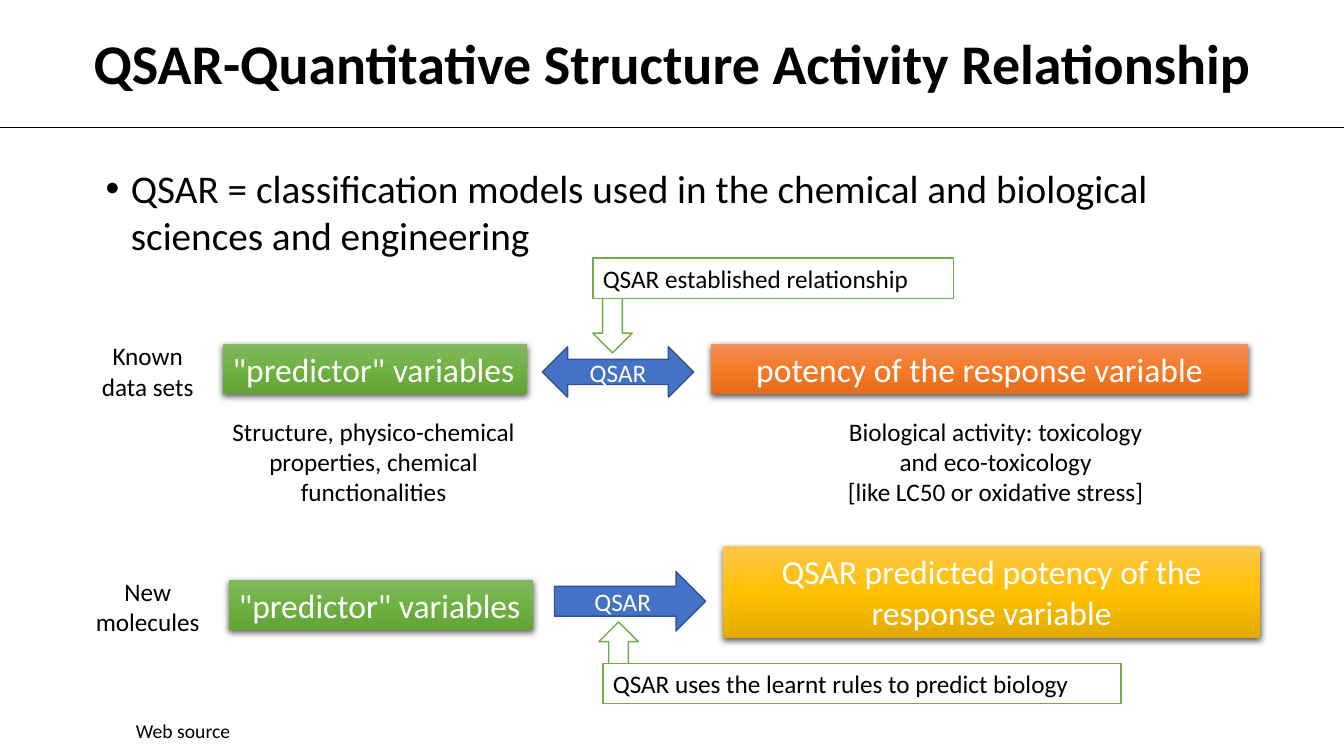
from dataclasses import dataclass
from typing import Optional

from pptx import Presentation
from pptx.dml.color import RGBColor as Rgb
from pptx.enum.shapes import MSO_CONNECTOR as Conn, MSO_SHAPE as Geom
from pptx.enum.text import MSO_ANCHOR as Anchor, MSO_AUTO_SIZE as Fit, PP_ALIGN as Align
from pptx.oxml import parse_xml
from pptx.oxml.ns import nsdecls, qn
from pptx.oxml.xmlchemy import OxmlElement as Node
from pptx.util import Inches, Pt


@dataclass(frozen=True)
class Theme:
    face: str = "Calibri"
    black: str = "000000"
    white: str = "FFFFFF"
    blue: str = "4472C4"
    navy: str = "325491"
    leaf: str = "70AD47"
    green: tuple = ("81B861", "6FB242", "62A336")
    orange: tuple = ("F18C57", "F67B28", "E56C19")
    gold: tuple = ("FFC64B", "FFC000", "E3AB00")
    title: int = 40
    body: int = 28
    card: int = 24
    label: int = 18
    small: int = 14


T = Theme()


@dataclass(frozen=True)
class Text:
    """Words with their look; each line of text is one paragraph."""
    words: str
    size: int = T.label
    color: str = T.black
    align: Align = Align.CENTER
    bold: bool = False
    wrap: bool = True
    fit: Fit = Fit.SHAPE_TO_FIT_TEXT
    anchor: Anchor = Anchor.TOP


@dataclass(frozen=True)
class Block:
    """A box at left, top, width, height; without geom it is a text box."""
    at: tuple
    text: Optional[Text] = None
    geom: Optional[Geom] = None
    fill: str = T.white
    edge: str = T.leaf
    grad: tuple = ()


def note(at: tuple, words: str, **look) -> Block:
    return Block(at, Text(words, **look))


def card(at: tuple, words: str, grad: tuple, **look) -> Block:
    text = Text(words, T.card, T.white, **look)
    return Block(at, text, Geom.RECTANGLE, grad=grad)


def model(at: tuple, geom: Geom) -> Block:
    text = Text("QSAR", color=T.white, fit=Fit.NONE, anchor=Anchor.MIDDLE)
    return Block(at, text, geom, T.blue, T.navy)


def callout(at: tuple, words: str) -> Block:
    return Block(at, Text(words, align=Align.LEFT), Geom.RECTANGLE)


def predictor(left: float, top: float) -> Block:
    return card((left, top, 3.02, 0.5), '"predictor" variables', T.green,
                align=Align.LEFT, wrap=False)


BLOCKS = (
    note((0.6, 0.23, 12.13, 0.77), "QSAR-Quantitative Structure Activity Relationship",
         size=T.title, bold=True, wrap=False),
    note((1.25, 7.08, 3.67, 0.34), "Web source", size=T.small, align=Align.LEFT),
    # Known data sets
    note((0.77, 3.33, 1.39, 0.71), "Known data sets"),
    predictor(2.21, 3.41),
    model((5.38, 3.44, 1.5, 0.5), Geom.LEFT_RIGHT_ARROW),
    card((7.05, 3.41, 5.33, 0.5), "potency of the response variable", T.orange),
    note((2.04, 4.08, 3.33, 1.01),
         "Structure, physico-chemical properties, chemical functionalities"),
    note((8.21, 4.08, 3.33, 1.01),
         "Biological activity: toxicology and eco-toxicology\n[like LC50 or oxidative stress]"),
    Block((5.88, 2.95, 0.39, 0.55), geom=Geom.DOWN_ARROW),
    callout((5.88, 2.56, 3.58, 0.4), "QSAR established relationship"),
    # New molecules
    note((0.77, 5.67, 1.39, 0.71), "New molecules"),
    predictor(2.27, 5.75),
    Block((5.94, 6.17, 0.39, 0.42), geom=Geom.UP_ARROW),
    callout((5.98, 6.58, 5.14, 0.4), "QSAR uses the learnt rules to predict biology"),
    model((5.5, 5.67, 1.5, 0.59), Geom.RIGHT_ARROW),
    card((7.17, 5.42, 5.33, 0.91), "QSAR predicted potency of the response variable", T.gold),
)
BODY = note((0.95, 1.58, 11.78, 4.17),
            "QSAR = classification models used in the chemical and biological sciences and engineering",
            size=T.body, align=Align.LEFT, fit=Fit.NONE)


def assign(target, values: dict) -> None:
    for name, value in values.items():
        setattr(target, name, value)


def write(frame, text: Text) -> None:
    assign(frame, {"word_wrap": text.wrap, "auto_size": text.fit,
                   "vertical_anchor": text.anchor})
    look = {"name": T.face, "size": Pt(text.size), "bold": text.bold}
    for index, words in enumerate(text.words.split("\n")):
        para = frame.add_paragraph() if index else frame.paragraphs[0]
        para.alignment = text.align
        run = para.add_run()
        run.text = words
        assign(run.font, look)
        run.font.color.rgb = Rgb.from_string(text.color)


def shade(shape, grad: tuple) -> None:
    """Give the shape a top-down gradient and a soft shadow, with no outline."""
    stops = "".join(f'<a:gs pos="{step * 50000}"><a:srgbClr val="{color}"/></a:gs>'
                    for step, color in enumerate(grad))
    props = shape._element.spPr
    props.find(qn("a:prstGeom")).addnext(parse_xml(
        f'<a:gradFill {nsdecls("a")} rotWithShape="1"><a:gsLst>{stops}</a:gsLst>'
        '<a:lin ang="5400000" scaled="0"/></a:gradFill>'))
    shape.line.fill.background()
    props.find(qn("a:effectLst")).append(parse_xml(
        f'<a:outerShdw {nsdecls("a")} blurRad="{Pt(4.5)}" dist="{Pt(1.5)}" dir="5400000" '
        f'algn="ctr" rotWithShape="0"><a:srgbClr val="{T.black}"><a:alpha val="63000"/>'
        '</a:srgbClr></a:outerShdw>'))


def draw(shapes, block: Block):
    place = [Inches(value) for value in block.at]
    if block.geom is None:
        shape = shapes.add_textbox(*place)
    else:
        shape = shapes.add_shape(block.geom, *place)
        shape.shadow.inherit = False
        if block.grad:
            shade(shape, block.grad)
        else:
            shape.fill.solid()
            shape.fill.fore_color.rgb = Rgb.from_string(block.fill)
            shape.line.color.rgb = Rgb.from_string(block.edge)
            shape.line.width = Pt(1)
    if block.text:
        write(shape.text_frame, block.text)
    return shape


def bullet(para) -> None:
    props = para._p.get_or_add_pPr()
    props.set("marL", str(Inches(0.25)))
    props.set("indent", str(Inches(-0.25)))
    font, mark = Node("a:buFont"), Node("a:buChar")
    font.set("typeface", "Arial")
    mark.set("char", "•")
    props.extend((font, mark))


def rule(shapes, top: float, width: int) -> None:
    line = shapes.add_connector(Conn.STRAIGHT, 0, Inches(top), width, Inches(top))
    line.line.color.rgb = Rgb.from_string(T.black)
    line.line.width = Pt(0.5)
    line._element.spPr.append(Node("a:effectLst"))


def main() -> None:
    deck = Presentation()
    assign(deck, {"slide_width": Inches(13.33), "slide_height": Inches(7.5)})
    shapes = deck.slides.add_slide(deck.slide_layouts[6]).shapes
    bullet(draw(shapes, BODY).text_frame.paragraphs[0])
    rule(shapes, 1.26, deck.slide_width)
    for block in BLOCKS:
        draw(shapes, block)
    deck.save("out.pptx")


if __name__ == "__main__":
    main()
